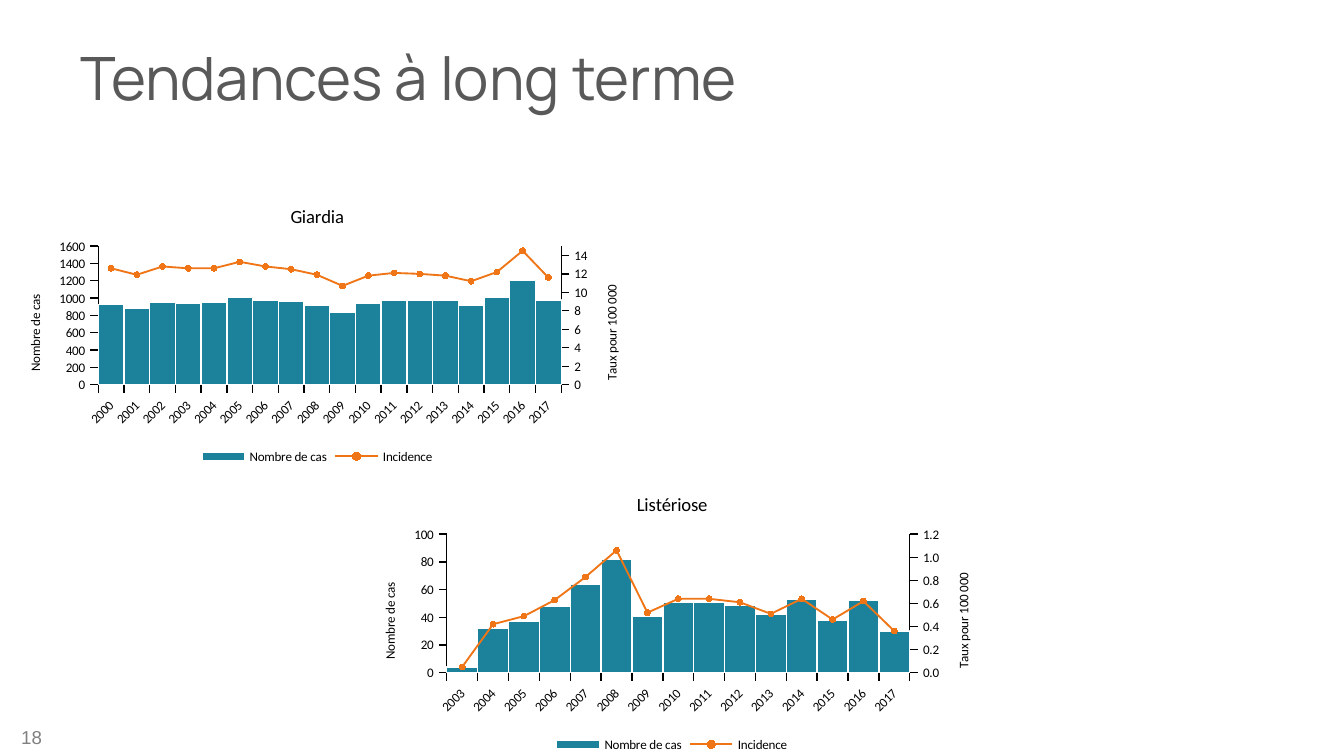
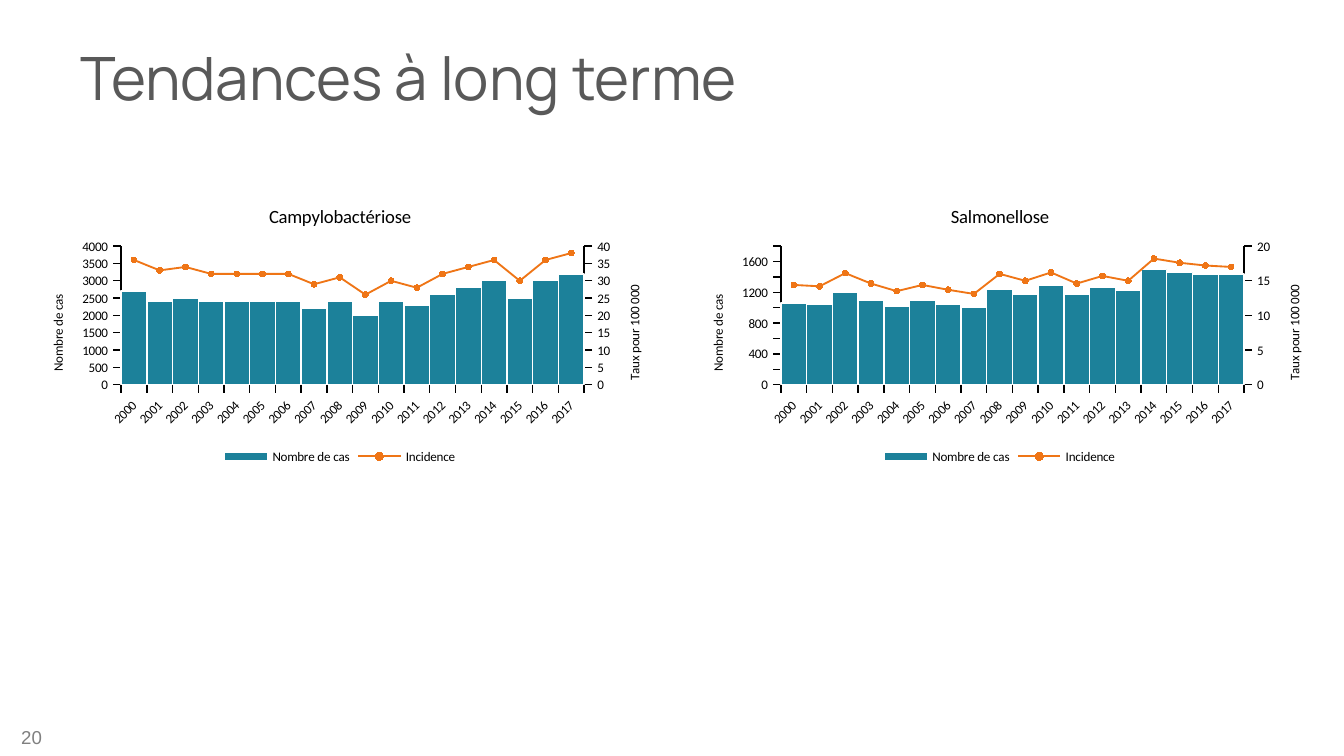
from pptx import Presentation
from pptx import util as u
from pptx.chart import axis as ax
from pptx.chart.data import CategoryChartData
from pptx.dml.color import RGBColor
from pptx.enum import chart as ch, text
from pptx.oxml import parse_xml
from pptx.oxml.ns import nsdecls

CHART_SIZE = (0.472, 0.372)
ROW_TOP, ROW_BOTTOM = 0.249, 0.63

LINE_PLOT = """<c:lineChart %s><c:grouping val="standard"/><c:varyColors val="0"/>
<c:marker val="1"/><c:axId val="901"/><c:axId val="902"/></c:lineChart>"""
HIDDEN_YEARS = """<c:catAx %s><c:axId val="901"/><c:scaling/><c:delete val="1"/>
<c:axPos val="b"/><c:crossAx val="902"/><c:crosses val="autoZero"/></c:catAx>"""
RIGHT_AXIS = """<c:valAx %s><c:axId val="902"/><c:scaling/><c:delete val="0"/>
<c:axPos val="r"/><c:crossAx val="901"/><c:crosses val="max"/></c:valAx>"""
PLOT_LAYOUT = """<c:layout %s><c:manualLayout><c:layoutTarget val="inner"/>
<c:xMode val="edge"/><c:yMode val="edge"/><c:x val="{}"/><c:y val="0.206"/>
<c:w val="0.73"/><c:h val="0.493"/></c:manualLayout></c:layout>"""
WHITE_AREA = """<c:spPr %s><a:solidFill><a:srgbClr val="FFFFFF"/></a:solidFill>
<a:ln><a:noFill/></a:ln></c:spPr>"""


def rgb(value):
    return RGBColor.from_string(value)


def chart_xml(template):
    return parse_xml(template % nsdecls("c", "a"))


class Deck:
    GREY, LIGHT_GREY, BLACK = "595959", "808080", "000000"
    TEAL, ORANGE, WHITE = "1C819A", "EF7516", "FFFFFF"

    def __init__(self):
        self.prs = Presentation()
        self.prs.slide_width, self.prs.slide_height = u.Inches(10), u.Inches(5.625)
        self.s = None

    def box(self, x, y, w, h):
        """Turn shares of the slide into lengths."""
        sw, sh = self.prs.slide_width, self.prs.slide_height
        return int(x * sw), int(y * sh), int(w * sw), int(h * sh)

    def slide(self, title, number):
        self.s = self.prs.slides.add_slide(self.prs.slide_layouts[6])
        self.text(title, (0.05, 0.018, 0.9, 0.167), "Manrope", 32, self.GREY)
        self.text(number, (-0.007, 0.948, 0.048, 0.053), "Arial", 10,
                  self.LIGHT_GREY, text.PP_ALIGN.RIGHT)

    def text(self, words, place, font, size, color, align=text.PP_ALIGN.LEFT):
        tf = self.s.shapes.add_textbox(*self.box(*place)).text_frame
        tf.word_wrap = True
        tf.vertical_anchor = text.MSO_ANCHOR.MIDDLE
        p = tf.paragraphs[0]
        p.alignment = align
        r = p.add_run()
        r.text = words
        self.font(r.font, size, color, font)

    def font(self, font, size, color=BLACK, name="Calibri"):
        font.name, font.size, font.bold = name, u.Pt(size), False
        font.color.rgb = rgb(color)

    def line(self, fmt, color, width=0.75):
        fmt.line.color.rgb = rgb(color)
        fmt.line.width = u.Pt(width)

    def heading(self, tf, words, size):
        r = tf.paragraphs[0].add_run()
        r.text = words
        self.font(r.font, size)

    def axis(self, axis, title=None, fmt=None, top=None, step=None):
        axis.has_major_gridlines = False
        axis.major_tick_mark = ch.XL_TICK_MARK.OUTSIDE
        axis.minor_tick_mark = ch.XL_TICK_MARK.NONE
        axis.tick_label_position = ch.XL_TICK_LABEL_POSITION.NEXT_TO_AXIS
        self.line(axis.format, self.BLACK)
        self.font(axis.tick_labels.font, 7)
        if title:
            self.heading(axis.axis_title.text_frame, title, 7)
            axis.tick_labels.number_format = fmt
            axis.tick_labels.number_format_is_linked = False
            axis.minimum_scale = 0
        if top:
            axis.maximum_scale = top
        if step:
            axis.major_unit = step

    def trend(self, x, y, title, first_year, cases, rates, top, step=None,
              rate_top=None, rate_fmt="0", plot_left=0.155):
        """Columns of cases, with the incidence line on a right-hand axis."""
        data = CategoryChartData()
        data.categories = [str(first_year + i) for i in range(len(cases))]
        data.add_series("Nombre de cas", cases)
        data.add_series("Incidence", rates)
        chart = self.s.shapes.add_chart(
            ch.XL_CHART_TYPE.COLUMN_CLUSTERED, *self.box(x, y, *CHART_SIZE), data).chart
        self.font(chart.font, 7)
        chart.has_title = True
        self.heading(chart.chart_title.text_frame, title, 10)
        chart.has_legend = True
        chart.legend.position = ch.XL_LEGEND_POSITION.BOTTOM
        chart.legend.include_in_layout = False
        self.font(chart.legend.font, 7)

        left = chart.value_axis
        right = self.split_line(chart, plot_left)
        self.axis(chart.category_axis)
        self.axis(left, "Nombre de cas", "#######0", top, step)
        self.axis(right, "Taux pour 100 000", rate_fmt, rate_top)
        years = chart.element.xpath(".//c:catAx/c:txPr/a:bodyPr")[0]
        years.set("rot", "-2700000")
        years.set("vert", "horz")

        columns, line = chart.plots
        columns.gap_width = 0
        columns.vary_by_categories = False
        bars, rate = columns.series[0], line.series[0]
        bars.format.fill.solid()
        bars.format.fill.fore_color.rgb = rgb(self.TEAL)
        self.line(bars.format, self.WHITE)
        self.line(rate.format, self.ORANGE, 1)
        rate.smooth = False
        rate.marker.style = ch.XL_MARKER_STYLE.CIRCLE
        rate.marker.size = 3
        rate.marker.format.fill.solid()
        rate.marker.format.fill.fore_color.rgb = rgb(self.ORANGE)
        rate.marker.format.line.fill.background()

    def split_line(self, chart, plot_left):
        """Move the second series to a line plot and return its value axis."""
        root = chart.element
        area, bar = root.xpath(".//c:plotArea")[0], root.xpath(".//c:barChart")[0]
        ser = bar.xpath("c:ser")[1]
        for flag in ser.xpath("c:invertIfNegative"):
            ser.remove(flag)
        plot = chart_xml(LINE_PLOT)
        plot.insert(2, ser)
        bar.addnext(plot)
        right = chart_xml(RIGHT_AXIS)
        last = area.xpath("c:valAx")[-1]
        last.addnext(right)
        right.addnext(chart_xml(HIDDEN_YEARS))
        for layout in area.xpath("c:layout"):
            area.remove(layout)
        area.insert(0, chart_xml(PLOT_LAYOUT.replace("{}", str(plot_left))))
        root.xpath("c:chart")[0].addnext(chart_xml(WHITE_AREA))
        return ax.ValueAxis(right)


def main():
    deck = Deck()
    heading = "Tendances à long terme"

    deck.slide(heading, "18")
    deck.trend(0, ROW_TOP, "Giardia", 2000,
               [930, 880, 950, 940, 950, 1010, 980, 960, 920,
                840, 940, 970, 970, 970, 920, 1010, 1210, 980],
               [12.6, 11.9, 12.8, 12.6, 12.6, 13.3, 12.8, 12.5, 11.9,
                10.7, 11.8, 12.1, 12, 11.8, 11.2, 12.2, 14.5, 11.6],
               top=1600, rate_top=15)
    deck.trend(0.264, ROW_BOTTOM, "Listériose", 2003,
               [4, 32, 37, 48, 64, 82, 41, 51, 51, 49, 42, 53, 38, 52, 30],
               [0.05, 0.42, 0.49, 0.63, 0.83, 1.06, 0.52, 0.64,
                0.64, 0.61, 0.51, 0.64, 0.46, 0.62, 0.36],
               top=100, rate_fmt="0.0", plot_left=0.145)

    deck.slide(heading, "20")
    deck.trend(0.017, ROW_TOP, "Campylobactériose", 2000,
               [2700, 2400, 2500, 2400, 2400, 2400, 2400, 2200, 2400,
                2000, 2400, 2300, 2600, 2800, 3000, 2500, 3000, 3200],
               [36, 33, 34, 32, 32, 32, 32, 29, 31, 26, 30, 28, 32, 34, 36, 30, 36, 38],
               top=4000)
    deck.trend(0.508, ROW_TOP, "Salmonellose", 2000,
               [1060, 1050, 1200, 1090, 1020, 1090, 1040, 1010, 1240,
                1180, 1290, 1170, 1270, 1220, 1500, 1460, 1440, 1440],
               [14.4, 14.2, 16.1, 14.6, 13.5, 14.4, 13.7, 13.1, 16,
                15, 16.2, 14.6, 15.7, 15, 18.2, 17.6, 17.2, 17],
               top=1800, step=200)
    deck.prs.save("out.pptx")


if __name__ == "__main__":
    main()
